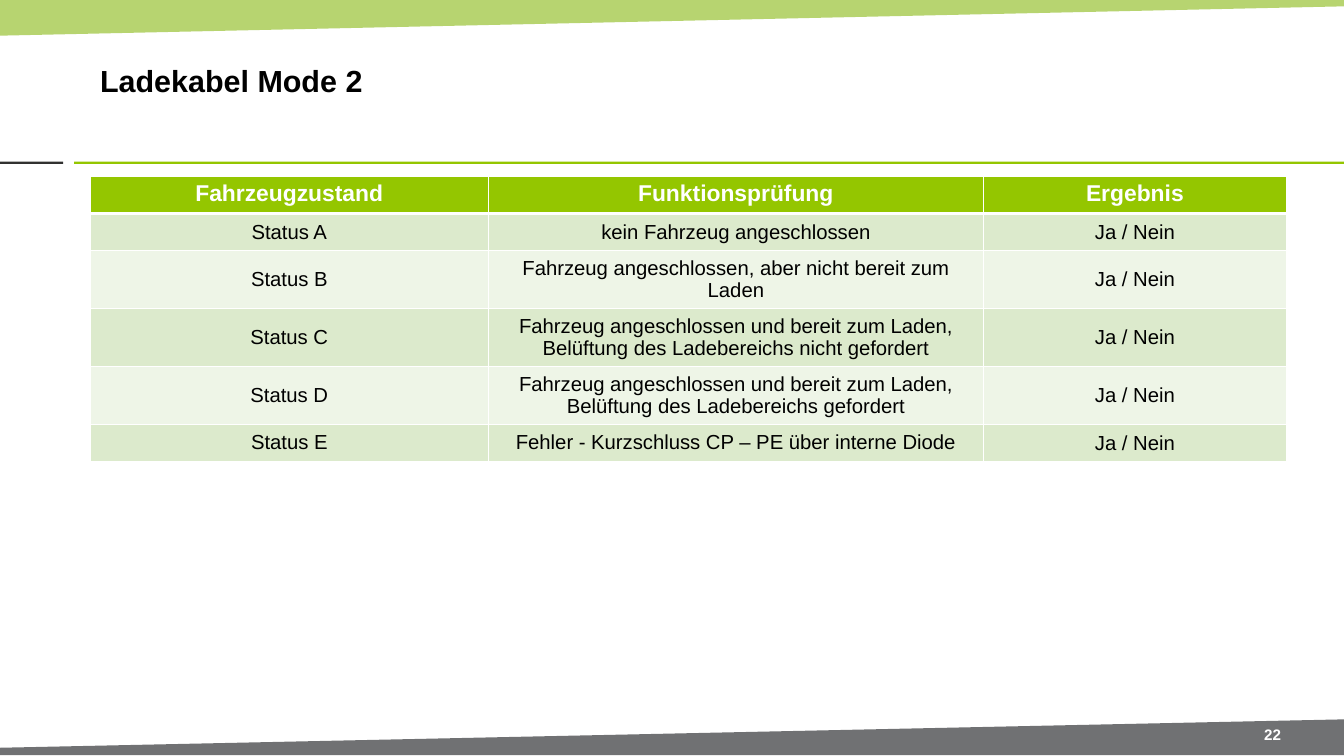
"""Builds the slide on the Mode 2 charging cable with its table of vehicle states."""
from typing import NamedTuple

from lxml import etree
from pptx import Presentation
from pptx.dml.color import RGBColor
from pptx.enum.shapes import MSO_SHAPE
from pptx.enum.text import MSO_ANCHOR, PP_ALIGN
from pptx.oxml.ns import qn
from pptx.util import Pt

RECTANGLE = MSO_SHAPE.RECTANGLE
MIDDLE, TOP = MSO_ANCHOR.MIDDLE, MSO_ANCHOR.TOP
LEFT, CENTER = PP_ALIGN.LEFT, PP_ALIGN.CENTER

WHITE = RGBColor(0xFF, 0xFF, 0xFF)
BLACK = RGBColor(0x00, 0x00, 0x00)
LEAF = RGBColor(0x95, 0xC0, 0x2A)
GREEN = RGBColor(0x94, 0xC6, 0x00)
CHARCOAL = RGBColor(0x31, 0x31, 0x30)
GREY = RGBColor(0x70, 0x71, 0x73)
BAND_DARK = RGBColor(0xDC, 0xEA, 0xCC)
BAND_LIGHT = RGBColor(0xEE, 0xF5, 0xE7)

FONT = "Arial"
PAGE_WIDTH, PAGE_HEIGHT = 1058.4, 595.44
COLUMN_WIDTHS = (313.9, 389.5, 239)
ROW_HEIGHT = 29.2
HEADER = ("Fahrzeugzustand", "Funktionsprüfung", "Ergebnis")
CHECKS = (
    "kein Fahrzeug angeschlossen",
    "Fahrzeug angeschlossen, aber nicht bereit zum Laden",
    "Fahrzeug angeschlossen und bereit zum Laden, Belüftung des Ladebereichs nicht gefordert",
    "Fahrzeug angeschlossen und bereit zum Laden, Belüftung des Ladebereichs gefordert",
    "Fehler - Kurzschluss CP – PE über interne Diode",
)


class Wedge(NamedTuple):
    """A slanted band along one edge of the page."""
    corners: tuple
    color: RGBColor
    opacity: int


class Rule(NamedTuple):
    """A thin bar below the title."""
    left: float
    width: float
    color: RGBColor


WEDGES = (
    Wedge(((0, 0), (PAGE_WIDTH, 0), (PAGE_WIDTH, 5), (0, 28.1)), LEAF, 67),
    Wedge(((PAGE_WIDTH, 594.7), (0, 594.7), (0, 589), (PAGE_WIDTH, 566.6)), GREY, 100),
)
RULES = (Rule(0, 49.7, CHARCOAL), Rule(58.3, PAGE_WIDTH - 58.3, GREEN))


def paint(shape, color: RGBColor) -> None:
    """Give a shape a plain fill without line or shadow."""
    shape.shadow.inherit = False
    shape.fill.solid()
    shape.fill.fore_color.rgb = color
    shape.line.fill.background()


def draw_wedge(page, wedge: Wedge) -> None:
    """Draw one slanted band."""
    points = [(Pt(x), Pt(y)) for x, y in wedge.corners]
    builder = page.shapes.build_freeform(*points[0])
    builder.add_line_segments(points[1:])
    shape = builder.convert_to_shape()
    paint(shape, wedge.color)
    if wedge.opacity < 100:
        color = shape.fill._xPr.find(".//" + qn("a:srgbClr"))
        etree.SubElement(color, qn("a:alpha"), val=str(wedge.opacity * 1000))


def draw_rule(page, rule: Rule) -> None:
    """Draw one bar below the title."""
    bar = page.shapes.add_shape(RECTANGLE, Pt(rule.left), Pt(127.4), Pt(rule.width), Pt(1.7))
    paint(bar, rule.color)


def style(paragraph, size: float, color: RGBColor, bold: bool, align: PP_ALIGN) -> None:
    """Set the font and alignment of a paragraph."""
    paragraph.alignment = align
    font = paragraph.font
    font.name, font.size, font.bold = FONT, Pt(size), bold
    font.color.rgb = color


def fill_box(box, text: str, size: float, color: RGBColor, align: PP_ALIGN) -> None:
    """Write bold text into the middle of a box."""
    frame = box.text_frame
    frame.text = text
    frame.word_wrap = True
    frame.vertical_anchor = MIDDLE
    frame.margin_left = frame.margin_right = Pt(7.9)
    frame.margin_top = frame.margin_bottom = Pt(4.3)
    style(frame.paragraphs[0], size, color, True, align)


def add_border(cell, side: str, width: float) -> None:
    """Add a white border to one side of a cell."""
    border = etree.SubElement(cell._tc.get_or_add_tcPr(), qn("a:ln" + side), w=str(Pt(width)))
    fill = etree.SubElement(border, qn("a:solidFill"))
    etree.SubElement(fill, qn("a:srgbClr"), val=str(WHITE))


def fill_cell(cell, text: str, row: int) -> None:
    """Write and format one table cell."""
    header = row == 0
    widths = {"L": 1, "R": 1, "T": 3 if row == 1 else 1, "B": 3 if header else 1}
    for side, width in widths.items():
        add_border(cell, side, width)
    cell.fill.solid()
    cell.fill.fore_color.rgb = GREEN if header else BAND_DARK if row % 2 else BAND_LIGHT
    cell.vertical_anchor = TOP if header else MIDDLE
    cell.text = text
    style(cell.text_frame.paragraphs[0], 18 if header else 16,
          WHITE if header else BLACK, header, CENTER)


def draw_table(page) -> None:
    """Draw the table of vehicle states."""
    rows = [HEADER]
    rows += [(f"Status {letter}", check, "Ja / Nein") for letter, check in zip("ABCDE", CHECKS)]
    table = page.shapes.add_table(
        len(rows), len(HEADER), Pt(70.9), Pt(139), Pt(sum(COLUMN_WIDTHS)),
        Pt(ROW_HEIGHT * len(rows))).table
    table.horz_banding = False
    for column, width in zip(table.columns, COLUMN_WIDTHS):
        column.width = Pt(width)
    for row, texts in enumerate(rows):
        table.rows[row].height = Pt(ROW_HEIGHT)
        for column, text in enumerate(texts):
            fill_cell(table.cell(row, column), text, row)
    last = table.cell(len(rows) - 1, len(HEADER) - 1).text_frame.paragraphs[0]
    last.line_spacing, last.space_after = 1.07, Pt(8)


def main() -> None:
    """Build and save the deck."""
    deck = Presentation()
    deck.slide_width, deck.slide_height = Pt(PAGE_WIDTH), Pt(PAGE_HEIGHT)
    page = deck.slides.add_slide(deck.slide_layouts[5])
    for wedge in WEDGES:
        draw_wedge(page, wedge)
    for rule in RULES:
        draw_rule(page, rule)
    title = page.shapes.title
    title.left, title.top, title.width, title.height = Pt(70.9), Pt(20.5), Pt(831), Pt(85.7)
    fill_box(title, "Ladekabel Mode 2", 24, BLACK, LEFT)
    number = page.shapes.add_textbox(Pt(971.3), Pt(568.1), Pt(61.9), Pt(20.9))
    fill_box(number, "22", 12, WHITE, CENTER)
    draw_table(page)
    deck.save("out.pptx")


if __name__ == "__main__":
    main()
